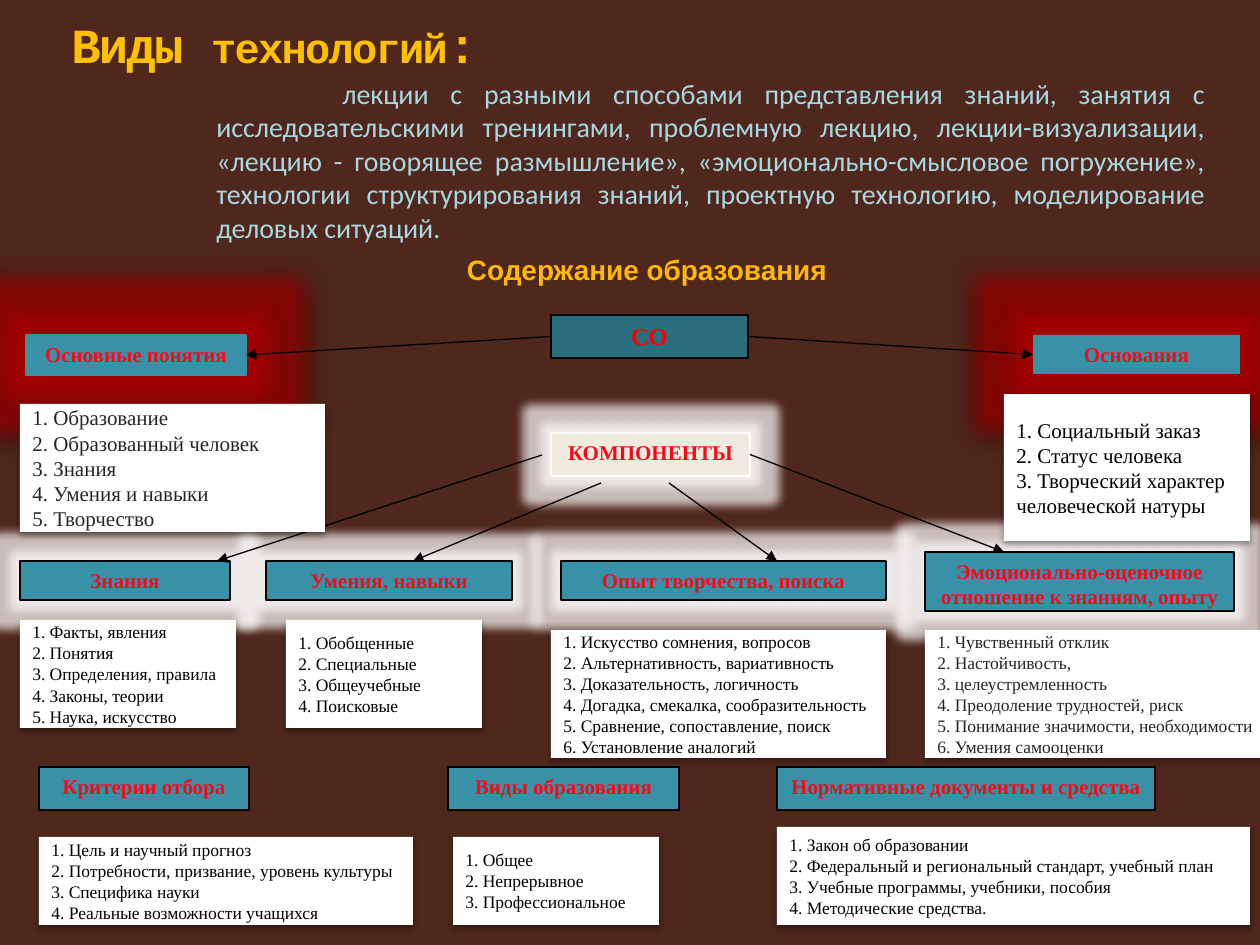
from lxml.etree import SubElement
from pptx import Presentation
from pptx.dml.color import RGBColor
from pptx.enum.shapes import MSO_CONNECTOR, MSO_SHAPE
from pptx.enum.text import MSO_ANCHOR, PP_ALIGN
from pptx.oxml.ns import qn
from pptx.util import Emu, Pt

COLORS = {
    "background": "4F271C", "title": "FFC000", "intro": "A9D7E2", "heading": "FEB80A",
    "teal": "3891A7", "dark teal": "2A6D7D", "cream": "F1EBDF", "white": "FFFFFF",
    "black": "000000", "gray": "262626", "label": "F80819", "red": "FF0000",
    "red glow": "C00000", "white glow": "FFFFFF",
}
SERIF = "Times New Roman"

TITLE = [("Виды ", 28), ("технологий", 24), (":", 28)]
INTRO = ("лекции с разными способами представления знаний, занятия с исследовательскими "
         "тренингами, проблемную лекцию, лекции-визуализации, «лекцию - говорящее "
         "размышление», «эмоционально-смысловое погружение», технологии структурирования "
         "знаний, проектную технологию, моделирование деловых ситуаций.")
HEADING = "Содержание образования"

# Labels: text, (left, top, width, height), fill, line, glow
LABELS = [
    ("СО", (551, 315, 197, 43), "dark teal", "black", None),
    ("Основания", (1033, 335, 207, 39), "teal", None, "red glow"),
    ("КОМПОНЕНТЫ", (551, 433, 199, 43), "cream", "white", "white glow"),
    ("Знания", (20, 561, 210, 39), "teal", "black", "white glow"),
    ("Основные понятия", (26, 335, 220, 40), "teal", "teal", "red glow"),
    ("Опыт творчества, поиска", (561, 561, 325, 39), "teal", "black", "white glow"),
    ("Умения, навыки", (266, 561, 246, 39), "teal", "black", "white glow"),
    ("Критерии отбора", (39, 767, 210, 43), "teal", "black", None),
    ("Эмоционально-оценочное отношение к знаниям, опыту", (925, 552, 309, 59),
     "teal", "black", "white glow"),
    ("Нормативные документы и средства", (777, 767, 378, 43), "teal", "black", None),
    ("Виды образования", (448, 767, 231, 43), "teal", "black", None),
]

# Arrows: start, end, (label, side) joined at the start and at the end
ARROWS = [
    ((551, 336), (246, 355), ("СО", 1), ("Основные понятия", 3)),
    ((748, 336), (1033, 354), ("СО", 3), ("Основания", 1)),
    ((542, 455), (217, 561), None, None),
    ((601, 483), (413, 561), None, None),
    ((669, 483), (777, 561), None, None),
    ((750, 454), (1004, 552), ("КОМПОНЕНТЫ", 3), None),
]

# Lists: (left, top, width, height), size, colour, hanging indent, items
LISTS = [
    ((20, 404, 305, 128), 12, "gray", 48,
     ["Образование", "Образованный человек", "Знания", "Умения и навыки", "Творчество"]),
    ((1004, 394, 246, 147), 12, "black", 0,
     ["Социальный заказ", "Статус человека", "Творческий характер человеческой натуры"]),
    ((20, 620, 216, 108), 10, "black", 0,
     ["Факты, явления", "Понятия", "Определения, правила", "Законы, теории",
      "Наука, искусство"]),
    ((286, 620, 196, 108), 10, "black", 0,
     ["Обобщенные", "Специальные", "Общеучебные", "Поисковые"]),
    ((551, 630, 335, 128), 10, "black", 0,
     ["Искусство сомнения, вопросов", "Альтернативность, вариативность",
      "Доказательность, логичность", "Догадка, смекалка, сообразительность",
      "Сравнение, сопоставление, поиск", "Установление аналогий"]),
    ((925, 630, 354, 128), 10, "gray", 0,
     ["Чувственный отклик", "Настойчивость,", "целеустремленность",
      "Преодоление трудностей, риск", "Понимание значимости, необходимости",
      "Умения самооценки"]),
    ((39, 837, 374, 88), 10, "black", 0,
     ["Цель и научный прогноз", "Потребности, призвание, уровень культуры",
      "Специфика науки", "Реальные возможности учащихся"]),
    ((453, 837, 206, 88), 10, "black", 0, ["Общее", "Непрерывное", "Профессиональное"]),
    ((777, 827, 473, 98), 10, "black", 0,
     ["Закон об образовании", "Федеральный и региональный стандарт, учебный план",
      "Учебные программы, учебники, пособия", "Методические средства."]),
]


def px(value):
    return Emu(round(value * 914400 / 126))


def color(name):
    return RGBColor.from_string(COLORS[name])


def style(font, name, size, color_name, bold=False):
    font.name, font.size, font.bold = name, Pt(size), bold
    font.color.rgb = color(color_name)


def add_effect(shape, tag, color_name, alpha, **attributes):
    effects = shape._element.spPr.find(qn("a:effectLst"))
    effect = SubElement(effects, qn(tag), {key: str(v) for key, v in attributes.items()})
    fill = SubElement(effect, qn("a:srgbClr"), val=COLORS[color_name])
    SubElement(fill, qn("a:alpha"), val=str(alpha * 1000))


def add_shadow(shape, alpha, blur, distance):
    add_effect(shape, "a:outerShdw", "black", alpha, blurRad=Pt(blur), dist=Pt(distance),
               dir=90 * 60000, algn="ctr", rotWithShape=0)


def add_box(box, fill, line=None):
    shape = slide.shapes.add_shape(MSO_SHAPE.RECTANGLE, *map(px, box))
    shape.shadow.inherit = False
    shape.fill.solid()
    shape.fill.fore_color.rgb = color(fill)
    if line:
        shape.line.color.rgb = color(line)
        shape.line.width = Pt(0.75)
    else:
        shape.line.fill.background()
    shape.text_frame.word_wrap = True
    return shape


def add_text(box, wrap=True):
    text_frame = slide.shapes.add_textbox(*map(px, box)).text_frame
    text_frame.word_wrap = wrap
    return text_frame


presentation = Presentation()
presentation.slide_width, presentation.slide_height = px(1260), px(945)
slide = presentation.slides.add_slide(presentation.slide_layouts[6])
slide.background.fill.solid()
slide.background.fill.fore_color.rgb = color("background")

# Title
paragraph = add_text((59, 8, 1071, 68)).paragraphs[0]
for text, size in TITLE:
    run = paragraph.add_run()
    run.text = text
    style(run.font, "Courier New", size, "title", True)
    run.font._element.set("spc", "-100")

# Introduction
text_frame = add_text((147, 70, 1071, 178))
text_frame.text = INTRO
paragraph = text_frame.paragraphs[0]
paragraph.alignment = PP_ALIGN.JUSTIFY
paragraph._p.get_or_add_pPr().set("marL", str(px(57)))
paragraph._p.get_or_add_pPr().set("indent", str(px(126)))
style(paragraph.runs[0].font, "Calibri", 16, "intro")

# Heading
text_frame = add_text((452, 246, 390, 47), wrap=False)
text_frame.text = HEADING
text_frame.vertical_anchor = MSO_ANCHOR.MIDDLE
text_frame.paragraphs[0].alignment = PP_ALIGN.CENTER
style(text_frame.paragraphs[0].runs[0].font, "Arial", 16, "heading", True)

# Labels
labels = {}
for text, box, fill, line, glow in LABELS:
    shape = labels[text] = add_box(box, fill, line)
    if glow == "red glow":
        add_effect(shape, "a:glow", glow, 60, rad=px(40))
        add_shadow(shape, 100, 8.5, 1)
    elif glow:
        add_effect(shape, "a:glow", glow, 70, rad=px(19))
    shape.text_frame.text = text
    shape.text_frame.vertical_anchor = MSO_ANCHOR.TOP
    paragraph = shape.text_frame.paragraphs[0]
    paragraph.alignment = PP_ALIGN.CENTER
    is_root = text == "СО"
    style(paragraph.runs[0].font, SERIF, 14 if is_root else 12,
          "red" if is_root else "label", True)

# Arrows
for start, end, start_joint, end_joint in ARROWS:
    connector = slide.shapes.add_connector(MSO_CONNECTOR.STRAIGHT, *map(px, start + end))
    if start_joint:
        connector.begin_connect(labels[start_joint[0]], start_joint[1])
    if end_joint:
        connector.end_connect(labels[end_joint[0]], end_joint[1])
    connector.line.color.rgb = color("black")
    connector.line.width = Pt(0.75)
    SubElement(connector.line._get_or_add_ln(), qn("a:tailEnd"), type="triangle")
    SubElement(connector._element.spPr, qn("a:effectLst"))

# Numbered lists
for box, size, color_name, hanging, items in LISTS:
    shape = add_box(box, "white")
    add_shadow(shape, 32, 3.5, 2.2)
    text_frame = shape.text_frame
    text_frame.vertical_anchor = MSO_ANCHOR.MIDDLE
    text_frame.text = "\n".join(f"{number}. {item}" for number, item in enumerate(items, 1))
    for paragraph in text_frame.paragraphs:
        paragraph.alignment = PP_ALIGN.LEFT
        properties = paragraph._p.get_or_add_pPr()
        properties.set("marL", str(px(hanging)))
        properties.set("indent", str(-px(hanging)))
        style(paragraph.runs[0].font, SERIF, size, color_name)

presentation.save("out.pptx")
